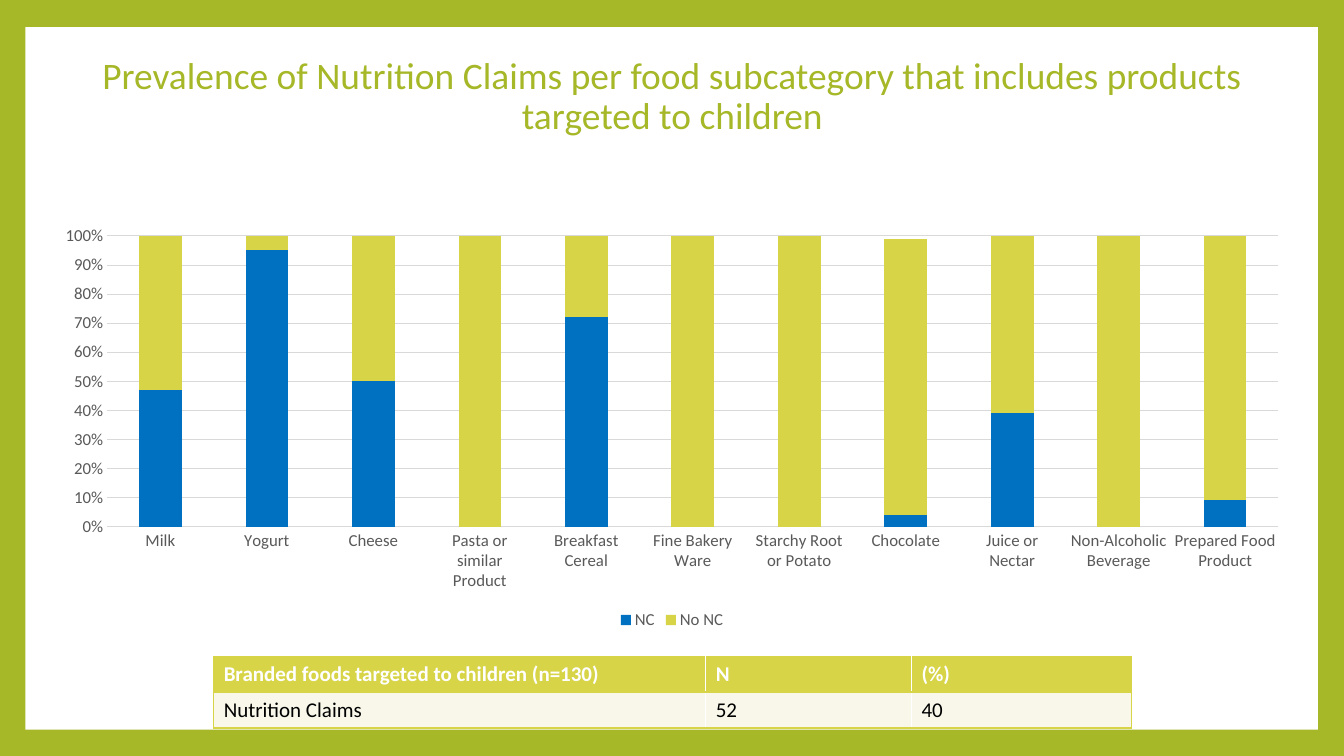
from lxml import etree
from pptx import Presentation
from pptx.chart.data import CategoryChartData as ChartData
from pptx.dml.color import RGBColor
from pptx.enum.chart import XL_CHART_TYPE as ChartType
from pptx.enum.chart import XL_LEGEND_POSITION as LegendPosition
from pptx.enum.chart import XL_TICK_MARK as TickMark
from pptx.enum.shapes import MSO_SHAPE as Shape
from pptx.enum.text import MSO_ANCHOR as Anchor
from pptx.enum.text import PP_ALIGN as Align
from pptx.oxml.ns import qn
from pptx.util import Inches, Pt

FONT = "Calibri"
GREEN = RGBColor(0xA6, 0xB7, 0x27)
LIME = RGBColor(0xD7, 0xD4, 0x47)
CREAM = RGBColor(0xF8, 0xF7, 0xE9)
BLUE = RGBColor(0x00, 0x70, 0xC0)
GREY = RGBColor(0x59, 0x59, 0x59)
PALE_GREY = RGBColor(0xD9, 0xD9, 0xD9)
WHITE = RGBColor(0xFF, 0xFF, 0xFF)
BLACK = RGBColor(0x00, 0x00, 0x00)

WIDTH, HEIGHT = Inches(13.33), Inches(7.5)
PANEL_AREA = (1.88, 3.6, 96.17, 92.93)
TITLE_AREA = (3, 0, 94.07, 25.73)
CHART_AREA = (3, 28.8, 94, 55.07)
TABLE_AREA = (15.9, 86.8, 68.27, 9.5)
COLUMN_SHARES = (53.63, 22.42, 23.95)

TITLE = ("Prevalence of Nutrition Claims per food subcategory "
         "that includes products targeted to children")
FOODS = ("Milk", "Yogurt", "Cheese", "Pasta or similar Product",
         "Breakfast Cereal", "Fine Bakery Ware", "Starchy Root or Potato",
         "Chocolate", "Juice or Nectar", "Non-Alcoholic Beverage",
         "Prepared Food Product")
SERIES = (
    ("NC", BLUE, (0.47, 0.95, 0.5, 0, 0.72, 0, 0, 0.04, 0.39, 0, 0.09)),
    ("No NC", LIME, (0.53, 0.05, 0.5, 1, 0.28, 1, 1, 0.95, 0.61, 1, 0.91)),
)
ROWS = (
    (("Branded foods targeted to children (n=130)", "N", "(%)"),
     LIME, WHITE, True),
    (("Nutrition Claims", "52", "40"), CREAM, BLACK, False),
)


def area(left, top, width, height):
    """Turn percentages of the slide into lengths."""
    return (int(WIDTH * left / 100), int(HEIGHT * top / 100),
            int(WIDTH * width / 100), int(HEIGHT * height / 100))


def apply(target, **values):
    """Set attributes from format values."""
    for name, value in values.items():
        setattr(target, name, value)


def style_font(font, size, color, bold=False):
    """Give a font its face, size, weight and colour."""
    apply(font, name=FONT, size=Pt(size), bold=bold)
    font.color.rgb = color


def style_line(line, color, width):
    """Give a line its colour and width."""
    line.color.rgb = color
    line.width = Pt(width)


def add_panel(page):
    """Draw the white panel inside the green frame."""
    panel = page.shapes.add_shape(Shape.RECTANGLE, *area(*PANEL_AREA))
    panel.shadow.inherit = False
    panel.fill.solid()
    panel.fill.fore_color.rgb = WHITE
    panel.line.fill.background()
    return panel


def fill_title(title):
    """Write and format the title placeholder."""
    left, top, width, height = area(*TITLE_AREA)
    apply(title, left=left, top=top, width=width, height=height)
    inset = Inches(0.1)
    apply(title.text_frame, text=TITLE, word_wrap=True,
          vertical_anchor=Anchor.MIDDLE, margin_left=inset,
          margin_right=inset, margin_top=inset, margin_bottom=inset)
    para = title.text_frame.paragraphs[0]
    apply(para, alignment=Align.CENTER, line_spacing=0.9)
    style_font(para.runs[0].font, 26.7, GREEN)


def style_axis(axis):
    """Remove tick marks and set the label font of an axis."""
    apply(axis, major_tick_mark=TickMark.NONE, minor_tick_mark=TickMark.NONE)
    style_font(axis.tick_labels.font, 12, GREY)


def add_claims_chart(page):
    """Add the stacked columns of claims per food."""
    data = ChartData(number_format="0%")
    data.categories = FOODS
    for name, _, values in SERIES:
        data.add_series(name, values)
    chart = page.shapes.add_chart(
        ChartType.COLUMN_STACKED, *area(*CHART_AREA), data).chart
    style_font(chart.font, 10, BLACK)
    apply(chart, has_title=False, has_legend=True)
    apply(chart.legend, position=LegendPosition.BOTTOM,
          include_in_layout=False)
    style_font(chart.legend.font, 12, GREY)

    plot = chart.plots[0]
    apply(plot, gap_width=150, overlap=100, vary_by_categories=False)
    for series, (_, color, _) in zip(plot.series, SERIES):
        series.format.fill.solid()
        series.format.fill.fore_color.rgb = color

    style_axis(chart.category_axis)
    style_line(chart.category_axis.format.line, PALE_GREY, 0.75)
    scale = chart.value_axis
    style_axis(scale)
    apply(scale, minimum_scale=0, maximum_scale=1, major_unit=0.1,
          has_major_gridlines=True)
    apply(scale.tick_labels, number_format="0%",
          number_format_is_linked=False)
    style_line(scale.major_gridlines.format.line, PALE_GREY, 0.75)
    scale.format.line.fill.background()


def add_borders(cell, sides):
    """Draw lime borders on the named sides of a cell."""
    properties = cell._tc.get_or_add_tcPr()
    for place, side in enumerate(sides):
        border = etree.Element(qn(f"a:ln{side}"), w=str(Pt(1)))
        fill = etree.SubElement(border, qn("a:solidFill"))
        etree.SubElement(fill, qn("a:srgbClr"), val=str(LIME))
        properties.insert(place, border)


def add_totals_table(page):
    """Add the table of totals below the chart."""
    left, top, width, height = area(*TABLE_AREA)
    table = page.shapes.add_table(
        len(ROWS), len(COLUMN_SHARES), left, top, width, height).table
    for column, share in zip(table.columns, COLUMN_SHARES):
        column.width = int(width * share / 100)
    edges = ("L", ""), ("", ""), ("", "R")
    for row, (texts, fill, color, bold) in zip(table.rows, ROWS):
        for cell, text, (start, end) in zip(row.cells, texts, edges):
            cell.text = text
            cell.fill.solid()
            cell.fill.fore_color.rgb = fill
            run = cell.text_frame.paragraphs[0].runs[0]
            style_font(run.font, 15, color, bold)
            add_borders(cell, start + end + "TB")


def main():
    """Build the slide and save it."""
    deck = Presentation()
    apply(deck, slide_width=WIDTH, slide_height=HEIGHT)
    page = deck.slides.add_slide(deck.slide_layouts[5])
    page.background.fill.solid()
    page.background.fill.fore_color.rgb = GREEN
    title = page.shapes.title
    add_panel(page).element.addnext(title.element)
    fill_title(title)
    add_claims_chart(page)
    add_totals_table(page)
    deck.save("out.pptx")


if __name__ == "__main__":
    main()
